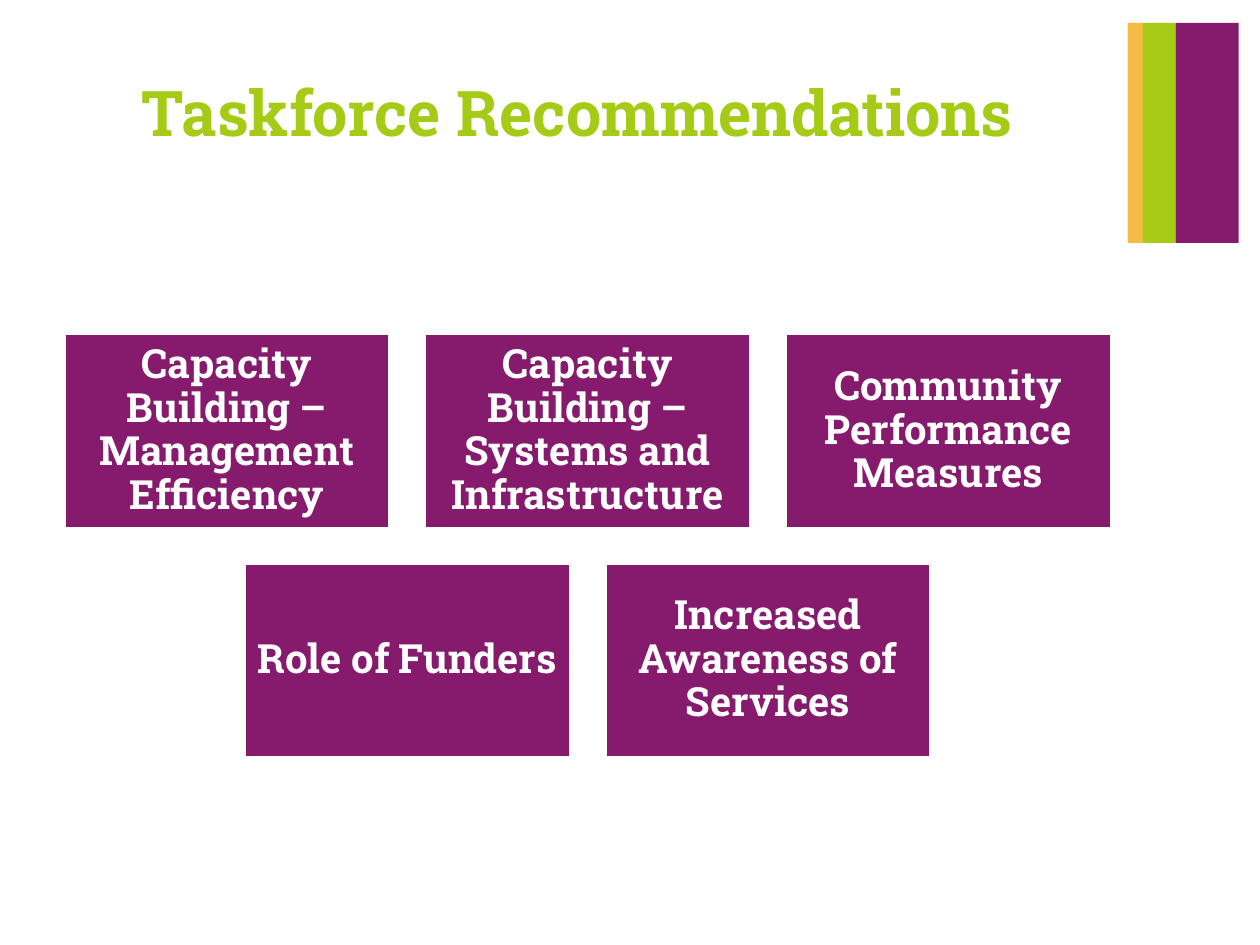
from dataclasses import dataclass

from lxml import etree
from pptx import Presentation
from pptx.dml.color import RGBColor
from pptx.enum.shapes import MSO_SHAPE
from pptx.enum.text import MSO_ANCHOR, MSO_AUTO_SIZE, PP_ALIGN
from pptx.oxml.ns import qn
from pptx.util import Cm, Pt

RECTANGLE = MSO_SHAPE.RECTANGLE
CENTER = PP_ALIGN.CENTER
TOP = MSO_ANCHOR.TOP
MIDDLE = MSO_ANCHOR.MIDDLE
NO_AUTOFIT = MSO_AUTO_SIZE.NONE
TITLE_ONLY = 5


@dataclass(frozen=True)
class Theme:
    """Colours, font and type sizes of the slide."""

    purple: str = "861B6D"
    green: str = "A5CB16"
    amber: str = "F4BB47"
    white: str = "FFFFFF"
    font: str = "Roboto Slab"
    title_size: int = 36
    card_size: int = 23


THEME = Theme()

STRIPES = [
    (22.73, 0.31, THEME.amber),
    (23.04, 0.66, THEME.green),
    (23.7, 1.27, THEME.purple),
]
STRIPE_TOP, STRIPE_HEIGHT = 0.46, 4.44

CARD_ROWS = [
    [
        "Capacity Building – Management Efficiency",
        "Capacity Building – Systems and Infrastructure",
        "Community Performance Measures",
    ],
    ["Role of Funders", "Increased Awareness of Services"],
]
CARD_WIDTH, CARD_HEIGHT, CARD_GAP = 6.61, 3.96, 0.66
CARDS_CENTER, CARDS_TOP = 11.85, 6.71


def format_text(paragraph, size, color):
    """Centre a paragraph and style its runs in bold."""
    paragraph.alignment = CENTER
    for run in paragraph.runs:
        run.font.name = THEME.font
        run.font.size = Pt(size)
        run.font.bold = True
        run.font.color.rgb = RGBColor.from_string(color)


def outline_text(run, color, width):
    """Draw a solid outline around the letters of a run."""
    line = etree.Element(qn("a:ln"), w=str(Pt(width)))
    fill = etree.SubElement(line, qn("a:solidFill"))
    etree.SubElement(fill, qn("a:srgbClr"), val=color)
    run.font._element.insert(0, line)


def add_title(slide, text):
    """Place and format the title placeholder."""
    title = slide.shapes.title
    title.left, title.top = Cm(1.4), Cm(1.35)
    title.width, title.height = Cm(20.83), Cm(3.1)
    frame = title.text_frame
    frame.text = text
    frame.auto_size = NO_AUTOFIT
    frame.vertical_anchor = TOP
    frame.margin_right = Cm(0.6)
    paragraph = frame.paragraphs[0]
    format_text(paragraph, THEME.title_size, THEME.green)
    outline_text(paragraph.runs[0], THEME.purple, 0.75)


def add_rectangle(slide, left, top, width, height, color):
    """Add a flat filled rectangle without a line."""
    shape = slide.shapes.add_shape(
        RECTANGLE, Cm(left), Cm(top), Cm(width), Cm(height)
    )
    shape.shadow.inherit = False
    shape.fill.solid()
    shape.fill.fore_color.rgb = RGBColor.from_string(color)
    shape.line.fill.background()
    return shape


def add_card(slide, left, top, text):
    """Add a recommendation card with a white border."""
    card = add_rectangle(slide, left, top, CARD_WIDTH, CARD_HEIGHT, THEME.purple)
    card.line.color.rgb = RGBColor.from_string(THEME.white)
    card.line.width = Pt(3)
    frame = card.text_frame
    frame.text = text
    frame.word_wrap = True
    frame.vertical_anchor = MIDDLE
    frame.margin_left = frame.margin_right = Cm(0.24)
    frame.margin_top = frame.margin_bottom = Cm(0.24)
    paragraph = frame.paragraphs[0]
    paragraph.line_spacing = 0.9
    format_text(paragraph, THEME.card_size, THEME.white)


def add_card_rows(slide):
    """Lay out the cards in rows centred on one axis."""
    pitch = CARD_WIDTH + CARD_GAP
    for row, texts in enumerate(CARD_ROWS):
        row_left = CARDS_CENTER - (len(texts) * pitch - CARD_GAP) / 2
        top = CARDS_TOP + row * (CARD_HEIGHT + CARD_GAP)
        for column, text in enumerate(texts):
            add_card(slide, row_left + column * pitch, top, text)


def main():
    """Build and save the presentation."""
    presentation = Presentation()
    presentation.slide_width, presentation.slide_height = Cm(25.4), Cm(19.05)
    slide = presentation.slides.add_slide(presentation.slide_layouts[TITLE_ONLY])
    for left, width, color in STRIPES:
        add_rectangle(slide, left, STRIPE_TOP, width, STRIPE_HEIGHT, color)
    add_title(slide, "Taskforce Recommendations")
    add_card_rows(slide)
    presentation.save("out.pptx")


if __name__ == "__main__":
    main()
